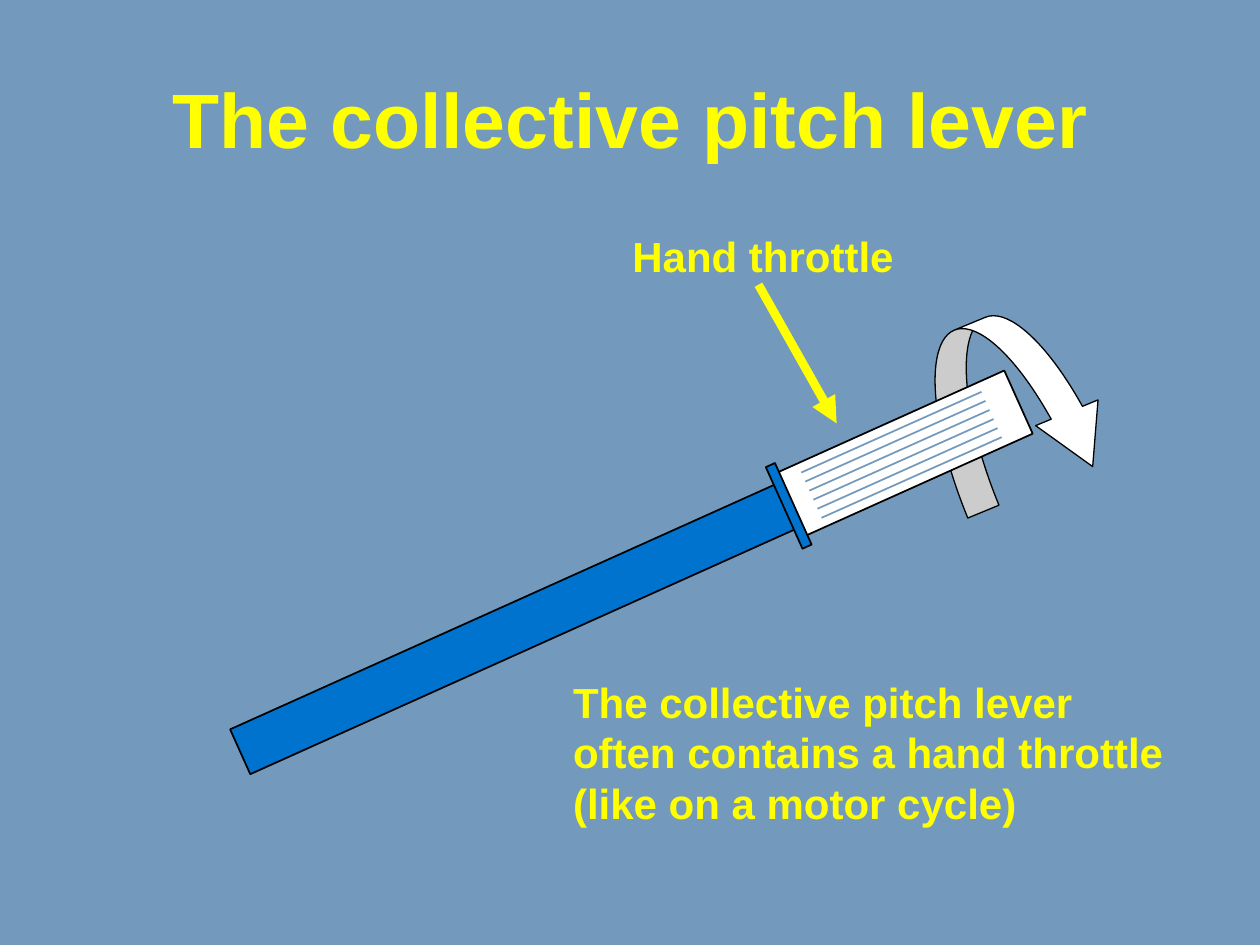
from lxml.etree import SubElement
from pptx import Presentation
from pptx.dml.color import RGBColor
from pptx.enum.shapes import MSO_CONNECTOR, MSO_SHAPE
from pptx.enum.text import MSO_AUTO_SIZE, PP_ALIGN
from pptx.oxml.ns import qn
from pptx.util import Inches, Pt

BACK, YELLOW, BLUE, WHITE, BLACK = "739ABC", "FFFF00", "0073CF", "FFFFFF", "000000"
TILT = 335.8  # rotation shared by all parts of the lever


def color(value):
    return RGBColor.from_string(value)


def inches(*lengths):
    return [Inches(n) for n in lengths]


def add_text(s, box, text, size=24, wrap=True, **paragraph_format):
    tf = s.shapes.add_textbox(*inches(*box)).text_frame
    tf.word_wrap = wrap
    tf.auto_size = MSO_AUTO_SIZE.SHAPE_TO_FIT_TEXT
    p = tf.paragraphs[0]
    for name, value in paragraph_format.items():
        setattr(p, name, value)
    r = p.add_run()
    r.text = text
    for name, value in {"name": "Arial", "size": Pt(size), "bold": True}.items():
        setattr(r.font, name, value)
    r.font.color.rgb = color(YELLOW)


def add_solid(s, kind, box, fill, rotation=TILT, weight=1, adjustments=()):
    sp = s.shapes.add_shape(kind, *inches(*box))
    sp.shadow.inherit = False
    sp.rotation = rotation
    for i, value in enumerate(adjustments):
        sp.adjustments[i] = value
    sp.fill.solid()
    sp.fill.fore_color.rgb = color(fill)
    sp.line.color.rgb = color(BLACK)
    sp.line.width = Pt(weight)


def add_line(s, ends, stroke, weight, arrow=False):
    cn = s.shapes.add_connector(MSO_CONNECTOR.STRAIGHT, *inches(*ends))
    cn.line.color.rgb = color(stroke)
    cn.line.width = Pt(weight)
    if arrow:
        SubElement(cn.line._get_or_add_ln(), qn("a:tailEnd"), type="triangle")
    SubElement(cn._element.spPr, qn("a:effectLst"))


def add_grip_lines(s, count=6):
    # Parallel grooves, each shifted by one step across the grip
    for i in range(count):
        x, y = 6.36 + 0.032 * i, 3.75 + 0.072 * i
        add_line(s, (x, y, x + 1.43, y - 0.64), BACK, 1)


def main():
    prs = Presentation()
    prs.slide_width, prs.slide_height = inches(10, 7.5)
    s = prs.slides.add_slide(prs.slide_layouts[6])
    s.background.fill.solid()
    s.background.fill.fore_color.rgb = color(BACK)

    # Throttle label and pointer
    add_text(s, (4.92, 1.78, 2.81, 0.5), "Hand throttle")
    add_line(s, (6.02, 2.26, 6.64, 3.36), YELLOW, 5, arrow=True)

    # Turning arrow, passing behind the grip
    add_solid(s, MSO_SHAPE.CURVED_DOWN_ARROW, (7.36, 2.49, 1.34, 1.42), WHITE,
              rotation=337.6, weight=0.75, adjustments=(0.2, 0.4, 0.353))

    # Title and explanation
    add_text(s, (1.23, 0.6, 7.55, 0.76), "The collective pitch lever", size=44,
             wrap=False, alignment=PP_ALIGN.CENTER, line_spacing=0.9)
    add_text(s, (4.45, 5.32, 4.96, 1.31),
             "The collective pitch lever often contains a hand throttle "
             "(like on a motor cycle)")

    # Lever: shaft, grip, collar
    for box, fill in (
        ((1.63, 4.48, 6.3, 0.39), BLUE),
        ((6.2, 3.32, 1.97, 0.55), WHITE),
        ((6.22, 3.66, 0.08, 0.71), BLUE),
    ):
        add_solid(s, MSO_SHAPE.RECTANGLE, box, fill)
    add_grip_lines(s)

    prs.save("out.pptx")


if __name__ == "__main__":
    main()
